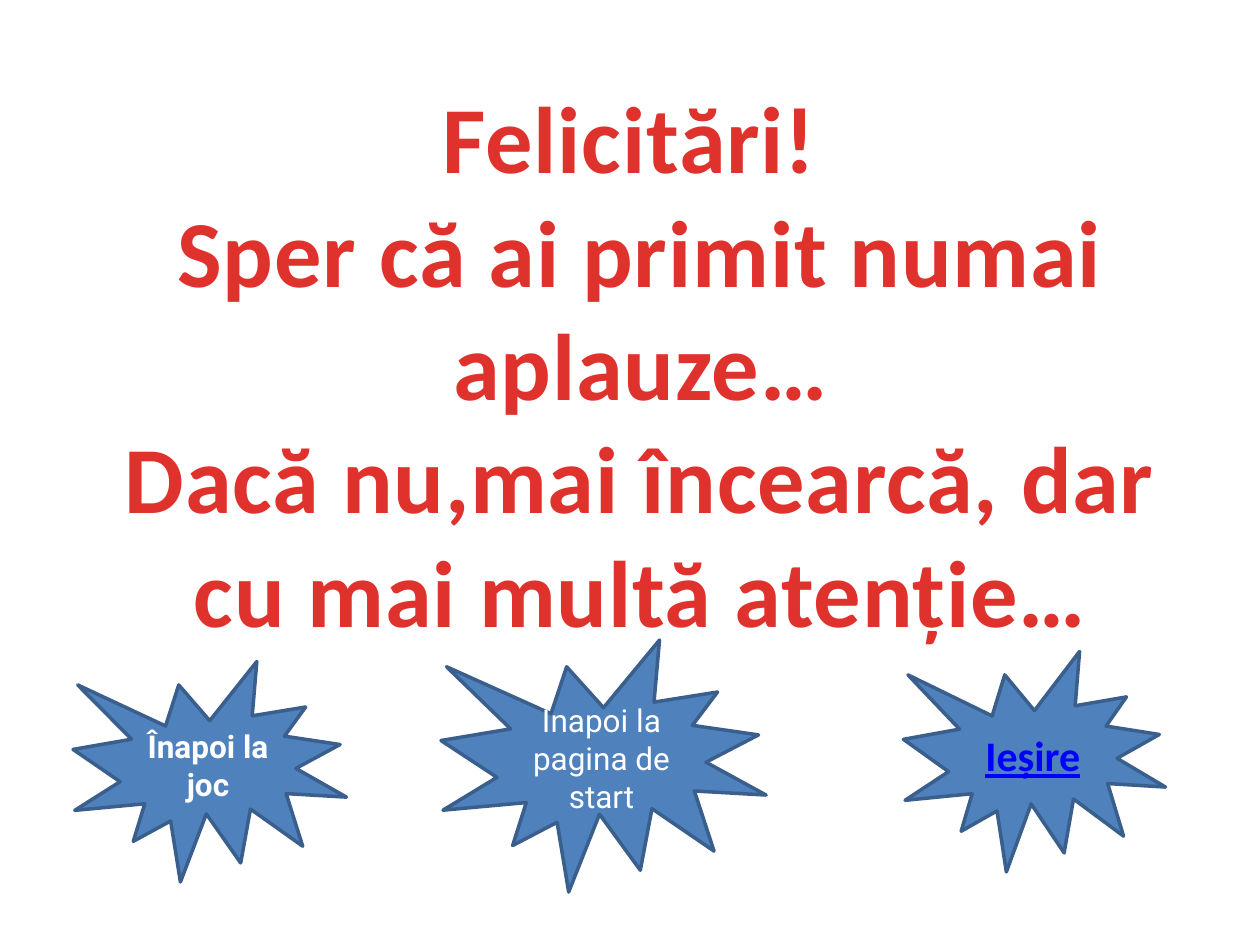
import dataclasses

import pptx
import pptx.dml.color
import pptx.enum.shapes
import pptx.enum.text
import pptx.util
from pptx.util import Inches


@dataclasses.dataclass(frozen=True)
class Theme:
    message_top: str = "E0322D"
    message_bottom: str = "A2201C"
    burst_fill: str = "4F81BD"
    burst_line: str = "3A5F8C"
    label: str = "FFFFFF"
    exit_label: str = "0000FF"
    message_font: str = "Calibri"
    label_font: str = "Roboto"
    message_size: int = 54
    label_size: int = 18
    exit_size: int = 24
    burst_line_width: int = 2


THEME = Theme()


def rgb(code):
    return pptx.dml.color.RGBColor.from_string(code)


def add_run(paragraph, words, font, size, bold):
    paragraph.alignment = pptx.enum.text.PP_ALIGN.CENTER
    run = paragraph.add_run()
    run.text = words
    run.font.name = font
    run.font.size = pptx.util.Pt(size)
    run.font.bold = bold
    return run


def add_message(slide, lines):
    message = slide.shapes.add_textbox(
        Inches(0.67), Inches(0.58), Inches(8.83), Inches(4.64)
    ).text_frame
    message.word_wrap = True
    message.auto_size = pptx.enum.text.MSO_AUTO_SIZE.SHAPE_TO_FIT_TEXT
    for index, line in enumerate(lines):
        paragraph = message.add_paragraph() if index else message.paragraphs[0]
        run = add_run(paragraph, line, THEME.message_font, THEME.message_size, True)
        run.font.fill.gradient()
        run.font.fill.gradient_angle = 270
        shades = ((0.25, THEME.message_top), (1, THEME.message_bottom))
        for stop, (position, color) in zip(run.font.fill.gradient_stops, shades):
            stop.position = position
            stop.color.rgb = rgb(color)
        run.font._element.set("spc", "50")


def add_burst(slide, left, top, width, height, label, color=THEME.label,
              font=THEME.label_font, size=THEME.label_size, bold=False,
              underline=False):
    burst = slide.shapes.add_shape(
        pptx.enum.shapes.MSO_SHAPE.EXPLOSION1,
        Inches(left), Inches(top), Inches(width), Inches(height),
    )
    burst.shadow.inherit = False
    burst.fill.solid()
    burst.fill.fore_color.rgb = rgb(THEME.burst_fill)
    burst.line.color.rgb = rgb(THEME.burst_line)
    burst.line.width = pptx.util.Pt(THEME.burst_line_width)
    burst.text_frame.word_wrap = True
    burst.text_frame.vertical_anchor = pptx.enum.text.MSO_ANCHOR.MIDDLE
    run = add_run(burst.text_frame.paragraphs[0], label, font, size, bold)
    run.font.color.rgb = rgb(color)
    run.font.underline = underline


def main():
    presentation = pptx.Presentation()
    presentation.slide_width = Inches(10)
    presentation.slide_height = Inches(7.5)
    slide = presentation.slides.add_slide(presentation.slide_layouts[6])
    add_message(slide, (
        "Felicitări! ",
        "Sper că ai primit numai aplauze…",
        "Dacă nu,mai încearcă, dar cu mai multă atenție…",
    ))
    add_burst(slide, 7.17, 5.17, 2.08, 1.75, "Ieșire", color=THEME.exit_label,
              font=THEME.message_font, size=THEME.exit_size, bold=True,
              underline=True)
    add_burst(slide, 0.58, 5.25, 2.17, 1.75, "Înapoi la joc", bold=True)
    add_burst(slide, 3.5, 5.08, 2.58, 2, "Înapoi la pagina de start")
    presentation.save("out.pptx")


if __name__ == "__main__":
    main()
